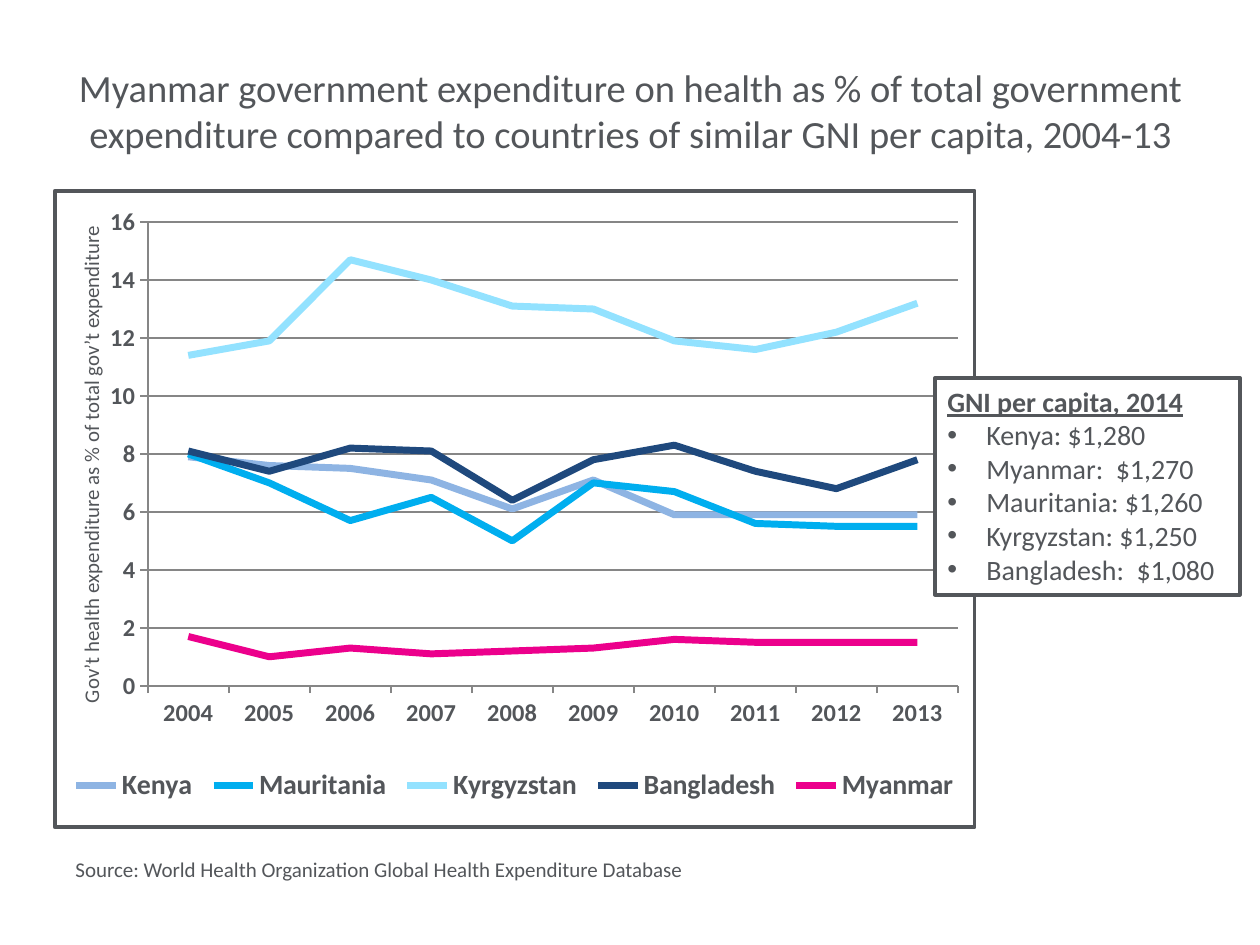
from lxml import etree
from pptx import Presentation
from pptx.chart.data import CategoryChartData
from pptx.dml.color import RGBColor
from pptx.enum.chart import XL_CHART_TYPE, XL_LEGEND_POSITION, XL_TICK_MARK
from pptx.enum.shapes import MSO_SHAPE
from pptx.enum.text import MSO_ANCHOR, PP_ALIGN
from pptx.oxml import parse_xml
from pptx.oxml.ns import nsdecls, qn
from pptx.util import Inches, Pt

THEME = {
    "font": "Calibri", "text": "53565A", "grid": "868686", "paper": "FFFFFF",
    "title": 22, "body": 16, "axis": 14, "small": 12,
    "border": 2.25, "series": 4, "rule": 1,
}
TITLE = ("Myanmar government expenditure on health as % of total government "
         "expenditure compared to countries of similar GNI per capita, 2004-13")
AXIS_TITLE = "Gov’t health expenditure as % of total gov’t expenditure"
SOURCE = "Source: World Health Organization Global Health Expenditure Database"
GNI_HEADING = "GNI per capita, 2014"
GNI = ["Kenya: $1,280", "Myanmar:  $1,270", "Mauritania: $1,260",
       "Kyrgyzstan: $1,250", "Bangladesh:  $1,080"]
YEARS = [str(year) for year in range(2004, 2014)]
SPENDING = [
    ("Kenya", "8EB4E3", [7.9, 7.6, 7.5, 7.1, 6.1, 7.1, 5.9, 5.9, 5.9, 5.9]),
    ("Mauritania", "00AEEF", [8, 7, 5.7, 6.5, 5, 7, 6.7, 5.6, 5.5, 5.5]),
    ("Kyrgyzstan", "93E2FF", [11.4, 11.9, 14.7, 14, 13.1, 13, 11.9, 11.6, 12.2, 13.2]),
    ("Bangladesh", "1F497D", [8.1, 7.4, 8.2, 8.1, 6.4, 7.8, 8.3, 7.4, 6.8, 7.8]),
    ("Myanmar", "EC008C", [1.7, 1, 1.3, 1.1, 1.2, 1.3, 1.6, 1.5, 1.5, 1.5]),
]


def box(left, top, width, height):
    return Inches(left), Inches(top), Inches(width), Inches(height)


def style_font(font, size, bold=False):
    font.name = THEME["font"]
    font.size = Pt(THEME[size])
    font.bold = bold
    font.color.rgb = RGBColor.from_string(THEME["text"])


def style_line(line, color, width):
    line.color.rgb = RGBColor.from_string(color)
    line.width = Pt(THEME[width])


def set_layout(parent, index, inner=False, **place):
    for old in parent.findall(qn("c:layout")):
        index = parent.index(old)
        parent.remove(old)
    layout = etree.Element(qn("c:layout"))
    manual = etree.SubElement(layout, qn("c:manualLayout"))
    settings = [("layoutTarget", "inner")] if inner else []
    settings += [("xMode", "edge"), ("yMode", "edge")]
    settings += [(key, str(value)) for key, value in place.items()]
    for key, value in settings:
        etree.SubElement(manual, qn("c:" + key)).set("val", value)
    parent.insert(index, layout)


def add_title(s):
    sp = s.shapes.title
    sp.left, sp.top, sp.width, sp.height = box(0.17, 0.25, 9.67, 1.25)
    tf = sp.text_frame
    tf.text = TITLE
    tf.vertical_anchor = MSO_ANCHOR.MIDDLE
    p = tf.paragraphs[0]
    p.alignment = PP_ALIGN.CENTER
    style_font(p.font, "title")


def add_spending_chart(s):
    data = CategoryChartData()
    data.categories = YEARS
    for name, _, values in SPENDING:
        data.add_series(name, values)
    chart = s.shapes.add_chart(XL_CHART_TYPE.LINE, *box(0.42, 1.5, 7.33, 5.08), data).chart
    chart.has_title = False
    style_font(chart.font, "axis")

    plot = chart.plots[0]
    plot.vary_by_categories = False
    for series, (_, color, _) in zip(plot.series, SPENDING):
        series.smooth = False
        style_line(series.format.line, color, "series")

    for axis in (chart.category_axis, chart.value_axis):
        axis.major_tick_mark = XL_TICK_MARK.OUTSIDE
        axis.minor_tick_mark = XL_TICK_MARK.NONE
        style_font(axis.tick_labels.font, "axis", bold=True)
        style_line(axis.format.line, THEME["grid"], "rule")

    axis = chart.value_axis
    axis.minimum_scale, axis.maximum_scale, axis.major_unit = 0, 16, 2
    axis.tick_labels.number_format = "#,##0"
    axis.tick_labels.number_format_is_linked = False
    axis.has_major_gridlines = True
    style_line(axis.major_gridlines.format.line, THEME["grid"], "rule")
    tf = axis.axis_title.text_frame
    tf.text = AXIS_TITLE
    style_font(tf.paragraphs[0].runs[0].font, "small")
    body = tf._txBody.find(qn("a:bodyPr"))
    body.set("rot", "-5400000")
    body.set("vert", "horz")

    chart.has_legend = True
    legend = chart.legend
    legend.position = XL_LEGEND_POSITION.BOTTOM
    legend.include_in_layout = False
    style_font(legend.font, "body", bold=True)

    space = chart._chartSpace
    set_layout(space.find(".//" + qn("c:plotArea")), 0, inner=True,
               x=0.101, y=0.049, w=0.881, h=0.729)
    set_layout(axis.axis_title._element, 1, x=0.02, y=0.05)
    set_layout(legend._element, 1, x=0.01, y=0.9, w=0.98, h=0.07)
    space.find(qn("c:chart")).addnext(parse_xml(
        f'<c:spPr {nsdecls("c", "a")}><a:noFill/><a:ln w="{Pt(THEME["border"])}">'
        f'<a:solidFill><a:srgbClr val="{THEME["text"]}"/></a:solidFill></a:ln></c:spPr>'))


def add_gni_box(s):
    sp = s.shapes.add_shape(MSO_SHAPE.RECTANGLE, *box(7.42, 3, 2.42, 1.72))
    sp.shadow.inherit = False
    sp.fill.solid()
    sp.fill.fore_color.rgb = RGBColor.from_string(THEME["paper"])
    style_line(sp.line, THEME["text"], "border")
    tf = sp.text_frame
    tf.word_wrap = True
    tf.vertical_anchor = MSO_ANCHOR.TOP
    p = tf.paragraphs[0]
    p.text = GNI_HEADING
    p.alignment = PP_ALIGN.LEFT
    style_font(p.font, "body", bold=True)
    p.font.underline = True
    for entry in GNI:
        p = tf.add_paragraph()
        p.text = entry
        p.alignment = PP_ALIGN.LEFT
        props = p._p.get_or_add_pPr()
        props.set("marL", str(Inches(0.31)))
        props.set("indent", str(-Inches(0.31)))
        etree.SubElement(props, qn("a:buFont")).set("typeface", "Arial")
        etree.SubElement(props, qn("a:buChar")).set("char", "•")
        style_font(p.font, "body")


def add_source(s):
    tf = s.shapes.add_textbox(*box(0.5, 6.75, 5.08, 0.3)).text_frame
    tf.word_wrap = True
    tf.text = SOURCE
    style_font(tf.paragraphs[0].font, "small")


def main():
    prs = Presentation()
    prs.slide_width, prs.slide_height = Inches(10), Inches(7.5)
    s = prs.slides.add_slide(prs.slide_layouts[5])
    add_title(s)
    add_spending_chart(s)
    add_gni_box(s)
    add_source(s)
    prs.save("out.pptx")


if __name__ == "__main__":
    main()
